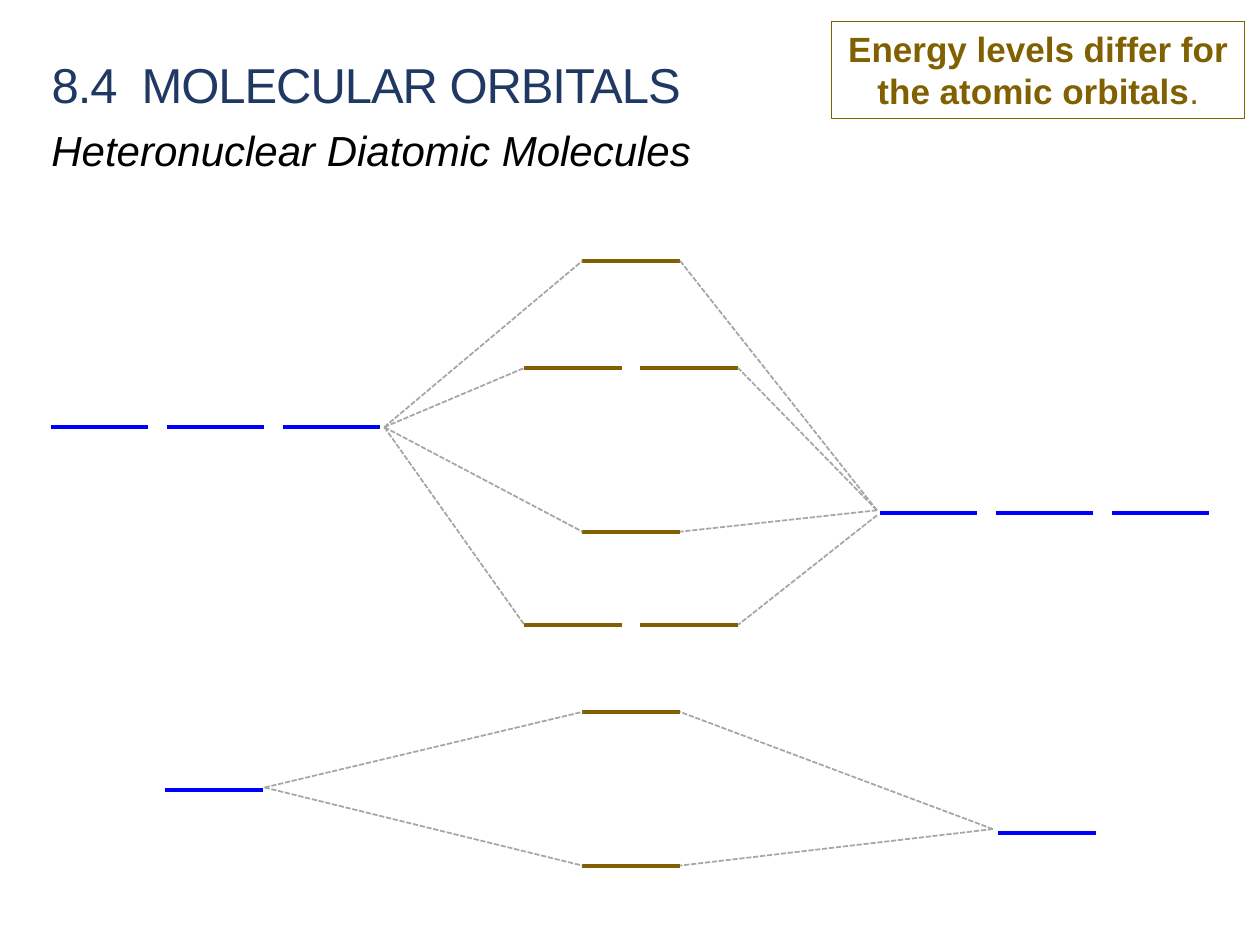
from dataclasses import dataclass

from lxml import etree
from pptx import Presentation
from pptx.dml.color import RGBColor
from pptx.enum import dml, shapes, text
from pptx.oxml import ns
from pptx import util as u


@dataclass(frozen=True)
class Theme:
    font: str = "Arial"
    navy: str = "203864"
    gold: str = "806000"
    blue: str = "0000FF"
    grey: str = "A6A6A6"
    black: str = "000000"
    white: str = "FFFFFF"
    head: float = 28
    sub: float = 24
    note: float = 20
    bar: float = 2.25
    link: float = 1
    edge: float = 0.75


T = Theme()
COLS, ROWS = 100, 75
WIDE, HIGH = u.Inches(10), u.Inches(7.5)
BAR = 7.75
PITCH = 9.2


def x(col):
    return round(WIDE * col / COLS)


def y(row):
    return round(HIGH * row / ROWS)


def rgb(code):
    return RGBColor.from_string(code)


def place(shape, left, top, width, height):
    shape.left, shape.top = x(left), y(top)
    shape.width, shape.height = x(width), y(height)


def write(shape, *parts, size, color, bold=False, italic=False, space=0,
          align=text.PP_ALIGN.LEFT, anchor=text.MSO_ANCHOR.TOP, wrap=True):
    frame = shape.text_frame
    frame.word_wrap = wrap
    frame.auto_size = text.MSO_AUTO_SIZE.NONE
    frame.vertical_anchor = anchor
    para = frame.paragraphs[0]
    para.alignment = align
    para.line_spacing = 1.0
    for index, part in enumerate(parts):
        run = para.add_run()
        run.text = part
        font = run.font
        font.name, font.size = T.font, u.Pt(size)
        font.color.rgb = rgb(color)
        font.bold = bold and index == 0
        font.italic = italic
        if space:
            run._r.get_or_add_rPr().set("spc", str(round(space * 100)))


def line(slide, start, end, color, width, dash=None):
    rule = slide.shapes.add_connector(
        shapes.MSO_CONNECTOR.STRAIGHT,
        x(start[0]), y(start[1]), x(end[0]), y(end[1]))
    rule.line.color.rgb = rgb(color)
    rule.line.width = u.Pt(width)
    if dash:
        rule.line.dash_style = dash
    etree.SubElement(rule._element.spPr, ns.qn("a:effectLst"))


def level(slide, mid, row, count, color):
    first = mid - PITCH * (count - 1) / 2 - BAR / 2
    for index in range(count):
        left = first + PITCH * index
        line(slide, (left, row), (left + BAR, row), color, T.bar)


def fan(slide, hub, ends):
    for end in ends:
        line(slide, hub, end, T.grey, T.link, dml.MSO_LINE.SQUARE_DOT)


def heads(slide):
    title = slide.shapes.title
    place(title, 3.1, 3.8, 93.3, 5.7)
    write(title, "8.4  MOLECULAR ORBITALS", size=T.head, color=T.navy,
          space=-0.6, anchor=text.MSO_ANCHOR.MIDDLE)
    sub = slide.shapes.add_textbox(0, 0, 0, 0)
    place(sub, 3.1, 9.4, 53.3, 5)
    write(sub, "Heteronuclear Diatomic Molecules", size=T.sub,
          color=T.black, italic=True, wrap=False)


def note(slide):
    box = slide.shapes.add_shape(shapes.MSO_SHAPE.RECTANGLE, 0, 0, 0, 0)
    place(box, 66, 1.7, 32.8, 7.7)
    box.shadow.inherit = False
    box.fill.solid()
    box.fill.fore_color.rgb = rgb(T.white)
    box.line.color.rgb = rgb(T.gold)
    box.line.width = u.Pt(T.edge)
    write(box, "Energy levels differ for the atomic orbitals", ".",
          size=T.note, color=T.gold, bold=True, align=text.PP_ALIGN.CENTER)


def diagram(slide):
    atoms = [(17.1, 33.9, 3), (82.9, 40.7, 3), (17, 62.7, 1), (83.1, 66.1, 1)]
    bonds = [(20.7, 1), (29.2, 2), (42.2, 1), (49.6, 2), (56.5, 1), (68.7, 1)]
    for mid, row, count in atoms:
        level(slide, mid, row, count, T.blue)
    for row, count in bonds:
        level(slide, 50.1, row, count, T.gold)

    reach = {1: BAR / 2, 2: (PITCH + BAR) / 2}
    left = [(50.1 - reach[count], row) for row, count in bonds]
    right = [(50.1 + reach[count], row) for row, count in bonds]
    fan(slide, (30.5, 33.9), left[:4])
    fan(slide, (69.6, 40.5), right[:3])
    fan(slide, (69.6, 40.9), right[3:4])
    fan(slide, (21, 62.5), left[4:])
    fan(slide, (78.8, 65.8), right[4:])


def main():
    deck = Presentation()
    deck.slide_width, deck.slide_height = WIDE, HIGH
    slide = deck.slides.add_slide(deck.slide_layouts[5])
    heads(slide)
    note(slide)
    diagram(slide)
    deck.save("out.pptx")


if __name__ == "__main__":
    main()
